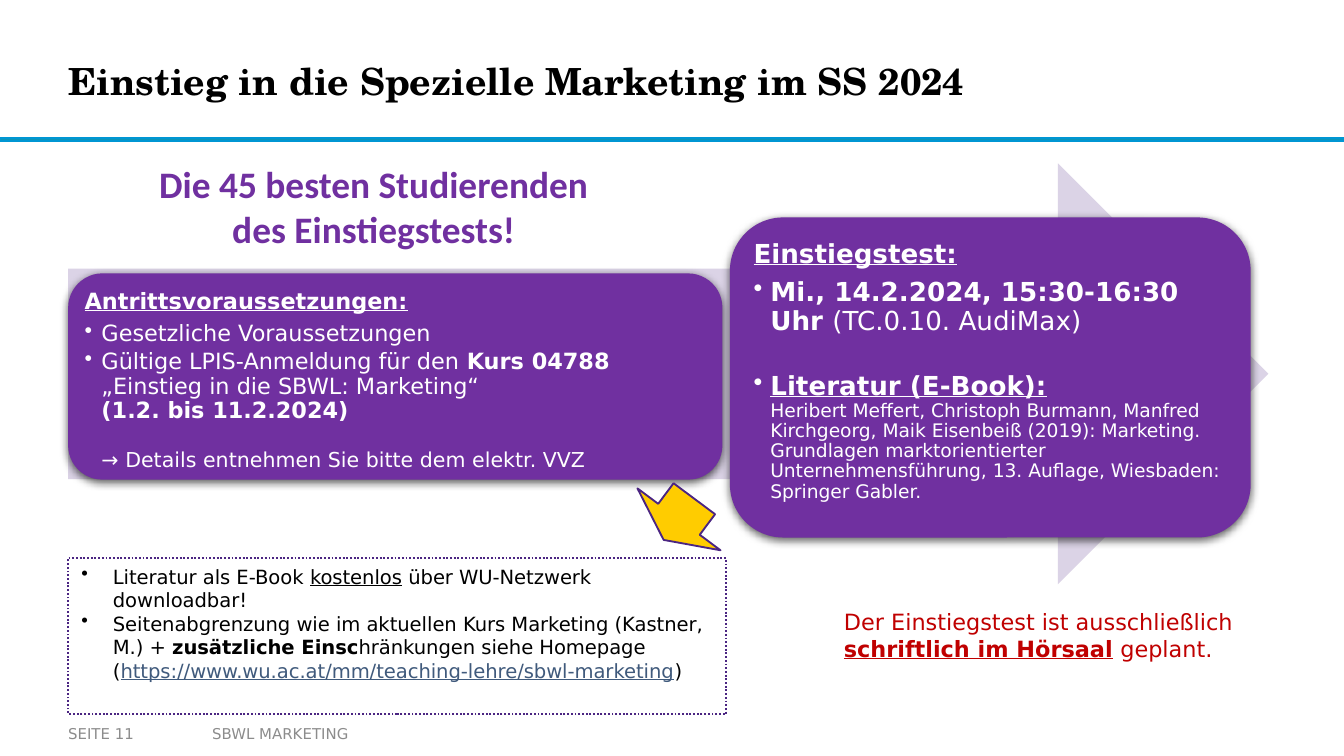
from lxml.etree import SubElement
from pptx import Presentation
from pptx.dml.color import RGBColor
from pptx.enum.dml import MSO_LINE
from pptx.enum.shapes import MSO_SHAPE
from pptx.enum.text import MSO_ANCHOR, PP_ALIGN
from pptx.oxml.ns import qn
from pptx.util import Pt

PURPLE = RGBColor(0x70, 0x30, 0xA0)
VIOLET = RGBColor(0x4B, 0x25, 0x82)
LILAC = RGBColor(0xDB, 0xD3, 0xE6)
YELLOW = RGBColor(0xFF, 0xCC, 0x00)
RED = RGBColor(0xC0, 0x00, 0x00)
TEAL = RGBColor(0x0C, 0x94, 0xB7)
BLUE = RGBColor(0x00, 0x96, 0xD3)
LINK = RGBColor(0x40, 0x5A, 0x7C)
GRAY = RGBColor(0x8C, 0x8C, 0x8C)
BLACK = RGBColor(0, 0, 0)
WHITE = RGBColor(255, 255, 255)
SANS = "DejaVu Sans"
CORNER = 1 / 6
CORNER_TEXT_INSET = 0.29


def style(font, size, color, name=SANS, bold=False, underline=False):
    font.name, font.size, font.bold, font.underline = name, Pt(size), bold, underline
    font.color.rgb = color


def prepare(frame, horizontal=7.2, vertical=3.6, anchor=MSO_ANCHOR.TOP):
    frame.word_wrap = True
    frame.vertical_anchor = anchor
    frame.margin_left = frame.margin_right = Pt(horizontal)
    frame.margin_top = frame.margin_bottom = Pt(vertical)


def add_spans(para, spans, size, color):
    for text, *options in spans:
        look = options[0] if options else {}
        for index, line in enumerate(text.split("\n")):
            if index:
                para.add_line_break()
            if line:
                span = para.add_run()
                span.text = line
                style(span.font, **{"size": size, "color": color, **look})


def indent(para, hanging, bullet=True):
    properties = para._p.get_or_add_pPr()
    properties.set("marL", str(Pt(hanging)))
    properties.set("indent", str(-Pt(hanging) if bullet else 0))
    if bullet:
        SubElement(properties, qn("a:buChar")).set("char", "•")


def add_figure(page, kind, box, fill, line=None, width=1):
    shape = page.shapes.add_shape(kind, *map(Pt, box))
    shape.shadow.inherit = False
    shape.fill.solid()
    shape.fill.fore_color.rgb = fill
    if line is None:
        shape.line.fill.background()
    else:
        shape.line.color.rgb = line
        shape.line.width = Pt(width)
    return shape


def add_note(page, box, spans, size, color, **margins):
    frame = page.shapes.add_textbox(*map(Pt, box)).text_frame
    prepare(frame, **margins)
    add_spans(frame.paragraphs[0], spans, size, color)


def add_header(page, box):
    left, top, width, height = box
    title = page.shapes.title
    title.left, title.top = Pt(left + 36.5), Pt(top + 13)
    title.width, title.height = Pt(575.5), Pt(60.5)
    prepare(title.text_frame, 0, 0, MSO_ANCHOR.MIDDLE)
    title.text_frame.text = "Einstieg in die Spezielle Marketing im SS 2024"
    para = title.text_frame.paragraphs[0]
    para.alignment = PP_ALIGN.LEFT
    style(para.runs[0].font, 20, BLACK, "TeX Gyre Schola", bold=True)
    add_figure(page, MSO_SHAPE.RECTANGLE, (left, top + height - 1.5, width, 1.5), TEAL, BLUE)


def add_footer(page, box):
    left, top, width, height = box
    for offset, span, margin, text in ((0, 70.5, 0, "SEITE 11"),
                                       (70, width - 70, 7.2, "SBWL MARKETING")):
        add_note(page, (left + offset, top, span, height), [(text,)], 8, GRAY,
                 horizontal=margin, anchor=MSO_ANCHOR.MIDDLE)


def add_card(page, box, heading, items, size, margin):
    card = add_figure(page, MSO_SHAPE.ROUNDED_RECTANGLE, box, PURPLE)
    card.adjustments[0] = CORNER
    effects = card._element.spPr.find(qn("a:effectLst"))
    shadow = SubElement(effects, qn("a:outerShdw"), blurRad=str(Pt(4.5)),
                        dist=str(Pt(1.5)), dir="5400000", rotWithShape="0")
    color = SubElement(shadow, qn("a:srgbClr"), val="000000")
    SubElement(color, qn("a:alpha"), val="63000")
    inset = margin - min(box[2:]) * CORNER * CORNER_TEXT_INSET
    frame = card.text_frame
    prepare(frame, inset, inset)
    para = frame.paragraphs[0]
    para.alignment = PP_ALIGN.LEFT
    para.line_spacing = 0.9
    para.space_after = Pt(size * 0.38)
    add_spans(para, [(heading, {"bold": True, "underline": True})], size, WHITE)
    for spans, bullet, before in items:
        para = frame.add_paragraph()
        indent(para, 9, bullet)
        para.alignment = PP_ALIGN.LEFT
        para.line_spacing = 0.9
        para.space_before = Pt(before)
        para.space_after = Pt(size * 0.17)
        add_spans(para, spans, size, WHITE)


def add_process(page, box):
    left, top, width, height = box
    add_figure(page, MSO_SHAPE.RIGHT_ARROW, box, LILAC)
    bold = {"bold": True}
    add_card(page, (left, top + 59, 350.5, 110.5), "Antrittsvoraussetzungen:", [
        ([("Gesetzliche Voraussetzungen",)], True, 0),
        ([("Gültige LPIS-Anmeldung für den ",), ("Kurs 04788\n", bold),
          ("„Einstieg in die SBWL: Marketing“\n",), ("(1.2. bis 11.2.2024)", bold)], True, 0),
        ([("→ Details entnehmen Sie bitte dem elektr. VVZ", {"size": 11})], False, 12),
    ], 12, 8.8)
    add_card(page, (left + 354.5, top + 29, 279, 171.5), "Einstiegstest:", [
        ([("Mi., 14.2.2024, 15:30-16:30 Uhr ", bold), ("(TC.0.10. AudiMax)",)], True, 0),
        ([("Literatur (E-Book):", {"bold": True, "underline": True}), ("\n",),
          ("Heribert Meffert, Christoph Burmann, Manfred Kirchgeorg, Maik Eisenbeiß "
           "(2019): Marketing. Grundlagen marktorientierter Unternehmensführung, "
           "13. Auflage, Wiesbaden: Springer Gabler.", {"size": 10})], True, 17.5),
    ], 14, 12.6)


def add_claim(page, box):
    frame = page.shapes.add_textbox(*map(Pt, box)).text_frame
    prepare(frame)
    frame.text = "Die 45 besten Studierenden\ndes Einstiegstests!"
    for para in frame.paragraphs:
        para.alignment = PP_ALIGN.CENTER
        style(para.runs[0].font, 20, PURPLE, "Calibri", bold=True)


def add_literature(page, box):
    left, top, width, height = box
    pointer = add_figure(page, MSO_SHAPE.DOWN_ARROW,
                         (left + 299.5, top - 34.5, 55.5, 27.5), YELLOW, VIOLET)
    pointer.rotation = 36.7
    panel = add_figure(page, MSO_SHAPE.RECTANGLE, box, WHITE, VIOLET)
    panel.line.dash_style = MSO_LINE.ROUND_DOT
    frame = panel.text_frame
    prepare(frame)
    items = [
        [("Literatur als E-Book ",), ("kostenlos", {"underline": True}),
         (" über WU-Netzwerk downloadbar!",)],
        [("Seitenabgrenzung wie im aktuellen Kurs Marketing (Kastner, M.) + ",),
         ("zusätzliche Einsc", {"bold": True}), ("hränkungen siehe Homepage (",),
         ("https://www.wu.ac.at/mm/teaching-lehre/sbwl-marketing",
          {"color": LINK, "underline": True}), (")",)],
    ]
    for index, spans in enumerate(items):
        para = frame.add_paragraph() if index else frame.paragraphs[0]
        indent(para, 16.9)
        para.alignment = PP_ALIGN.LEFT
        add_spans(para, spans, 10.5, BLACK)


def main():
    deck = Presentation()
    deck.slide_width, deck.slide_height = Pt(720), Pt(405)
    page = deck.slides.add_slide(deck.slide_layouts[5])
    add_header(page, (0, 0, 720, 75.5))
    add_footer(page, (36.5, 384, 323.5, 18))
    add_process(page, (36.5, 87.5, 643, 225.5))
    add_claim(page, (36.5, 83, 327.5, 55.5))
    add_literature(page, (36.5, 299, 352.5, 83.5))
    add_note(page, (445, 322.5, 260, 36),
             [("Der Einstiegstest ist ausschließlich ",),
              ("schriftlich im Hörsaal", {"bold": True, "underline": True}),
              (" geplant.",)], 12, RED)
    deck.save("out.pptx")


if __name__ == "__main__":
    main()
